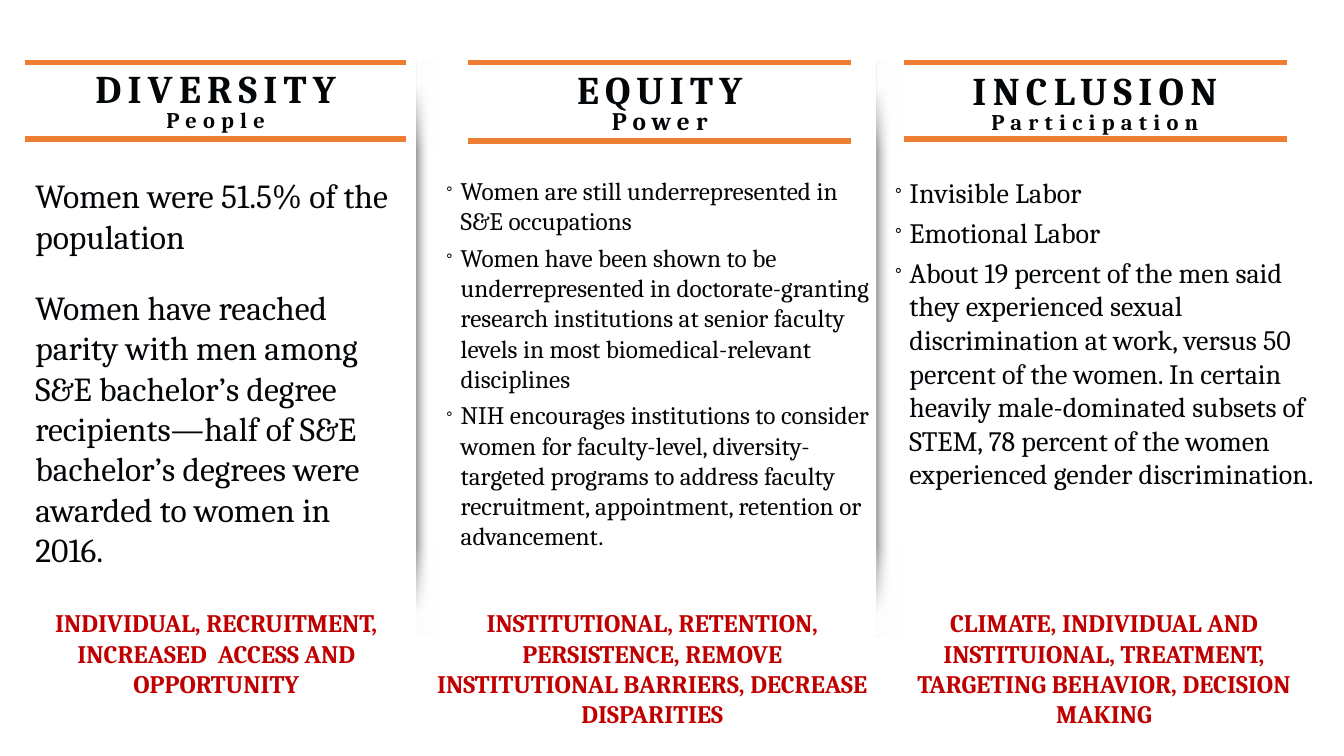
from lxml.etree import SubElement
from pptx import Presentation
from pptx.dml.color import RGBColor
from pptx.enum.shapes import MSO_CONNECTOR, MSO_SHAPE
from pptx.enum.text import MSO_ANCHOR, PP_ALIGN
from pptx.oxml.ns import qn
from pptx.util import Pt

PX = 9144  # EMU per px, 100 px to the inch
INK = RGBColor(0x03, 0x06, 0x09)
RED = RGBColor(0xC0, 0x00, 0x00)
ORANGE = RGBColor(0xED, 0x7D, 0x31)
GRAY = RGBColor(0x99, 0x99, 0x99)
WHITE = RGBColor(0xFF, 0xFF, 0xFF)


class SlideBuilder:
    font_name = "Cambria"

    def __init__(self, slide):
        self.slide = slide

    def text_frame(self, box, margins=(10, 5)):
        frame = self.slide.shapes.add_textbox(*(n * PX for n in box)).text_frame
        frame.word_wrap = True
        frame.margin_left = frame.margin_right = margins[0] * PX
        frame.margin_top = frame.margin_bottom = margins[1] * PX
        return frame

    def paragraphs(self, frame, texts, size, color=INK, bold=False):
        """Write one paragraph per text in a shared style and return them."""
        frame.text = "\n".join(texts)
        for paragraph in frame.paragraphs:
            font = paragraph.font
            font.name, font.size, font.bold = self.font_name, Pt(size), bold
            font.color.rgb = color
        return frame.paragraphs

    def rule(self, left, right, y):
        line = self.slide.shapes.add_connector(
            MSO_CONNECTOR.STRAIGHT, left * PX, y * PX, right * PX, y * PX)
        line.line.color.rgb = ORANGE
        line.line.width = Pt(4)
        SubElement(line._element.spPr, qn("a:effectLst"))

    def heading(self, box, title, subtitle, subtitle_size):
        frame = self.text_frame(box)
        frame.vertical_anchor = MSO_ANCHOR.MIDDLE
        lines = self.paragraphs(frame, [title, subtitle], 28, bold=True)
        lines[1].font.size = Pt(subtitle_size)
        for line in lines:
            line.alignment = PP_ALIGN.CENTER
            line.line_spacing = 0.8
            line._p.pPr.find(qn("a:defRPr")).set("spc", "450")

    def body(self, box, texts, size, bulleted=True, gap=4.5):
        frame = self.text_frame(box, (0, 0))
        for index, paragraph in enumerate(self.paragraphs(frame, texts, size)):
            paragraph.space_before = Pt(gap if index else 4.5)
            if bulleted:
                self.bullet(paragraph)

    def bullet(self, paragraph):
        properties = paragraph._p.pPr
        properties.set("marL", str(14 * PX))
        properties.set("indent", str(-14 * PX))
        run_defaults = properties.find(qn("a:defRPr"))
        for tag, name, value in (("a:buSzPct", "val", "25000"),
                                 ("a:buFont", "typeface", "Wingdings"),
                                 ("a:buChar", "char", "➢")):
            mark = SubElement(properties, qn(tag))
            mark.set(name, value)
            run_defaults.addprevious(mark)

    def focus(self, box, text):
        frame = self.text_frame(box)
        self.paragraphs(frame, [text], 18, RED, True)[0].alignment = PP_ALIGN.CENTER

    def fade(self, box, color, start, end, angle, rotation=0):
        """Draw a rectangle that fades from a colour to clear white."""
        shape = self.slide.shapes.add_shape(MSO_SHAPE.RECTANGLE, *(n * PX for n in box))
        shape.shadow.inherit = False
        shape.line.fill.background()
        shape.rotation = rotation
        shape.fill.gradient()
        shape.fill.gradient_angle = angle
        stops = shape.fill.gradient_stops
        for stop, stop_color, position in zip(stops, (color, WHITE), (start, end)):
            stop.color.rgb = stop_color
            stop.position = position
        clear = list(shape._element.spPr.iter(qn("a:srgbClr")))[-1]
        SubElement(clear, qn("a:alpha")).set("val", "0")

    def divider(self, left, top, width):
        """Draw a soft vertical shadow that fades out at both ends."""
        half = 288
        self.fade((left, top, width, 631 - top), GRAY, 0, 0.55, 0)
        self.fade((left, top, width, half), WHITE, 0.08, 0.31, 270)
        self.fade((left, 631 - half, width, half), WHITE, 0.08, 0.31, 270, 180)


COLUMNS = [
    dict(rules=(25, 403, 62, 138),
         heading=((25, 68, 378, 69), "DIVERSITY", "People", 16),
         body=((35, 174, 359, 187), [
             "Women were 51.5% of the population",
             "Women have reached parity with men among S&E bachelor’s degree "
             "recipients—half of S&E bachelor’s degrees were awarded to women in 2016.",
         ], 24, False, 22),
         focus=((-5, 598, 439, 101),
                "INDIVIDUAL, RECRUITMENT, INCREASED  ACCESS AND OPPORTUNITY")),
    dict(rules=(464, 844, 62, 140),
         heading=((443, 68, 423, 72), "EQUITY", "Power", 18),
         body=((443, 174, 423, 200), [
             "Women are still underrepresented in S&E occupations",
             "Women have been shown to be underrepresented in doctorate-granting "
             "research institutions at senior faculty levels in most "
             "biomedical-relevant disciplines",
             "NIH encourages institutions to consider women for faculty-level, "
             "diversity-targeted programs to address faculty recruitment, "
             "appointment, retention or advancement.",
         ], 18),
         focus=((416, 598, 462, 131),
                "INSTITUTIONAL, RETENTION, PERSISTENCE, REMOVE INSTITUTIONAL "
                "BARRIERS, DECREASE DISPARITIES")),
    dict(rules=(897, 1276, 62, 138),
         heading=((897, 70, 378, 69), "INCLUSION", "Participation", 16),
         body=((888, 174, 421, 187), [
             "Invisible Labor",
             "Emotional Labor",
             "About 19 percent of the men said they experienced sexual "
             "discrimination at work, versus 50 percent of the women. In certain "
             "heavily male-dominated subsets of STEM, 78 percent of the women "
             "experienced gender discrimination.",
         ], 20),
         focus=((877, 598, 436, 131),
                "CLIMATE, INDIVIDUAL AND INSTITUIONAL, TREATMENT, TARGETING "
                "BEHAVIOR, DECISION MAKING")),
]


def main():
    deck = Presentation()
    deck.slide_width, deck.slide_height = 1333 * PX, 750 * PX
    builder = SlideBuilder(deck.slides.add_slide(deck.slide_layouts[6]))

    builder.divider(413, 60, 26)
    builder.divider(869, 62, 28)
    for column in COLUMNS:
        left, right, *rule_heights = column["rules"]
        for y in rule_heights:
            builder.rule(left, right, y)
        builder.heading(*column["heading"])
        builder.body(*column["body"])
        builder.focus(*column["focus"])
    deck.save("out.pptx")


if __name__ == "__main__":
    main()
